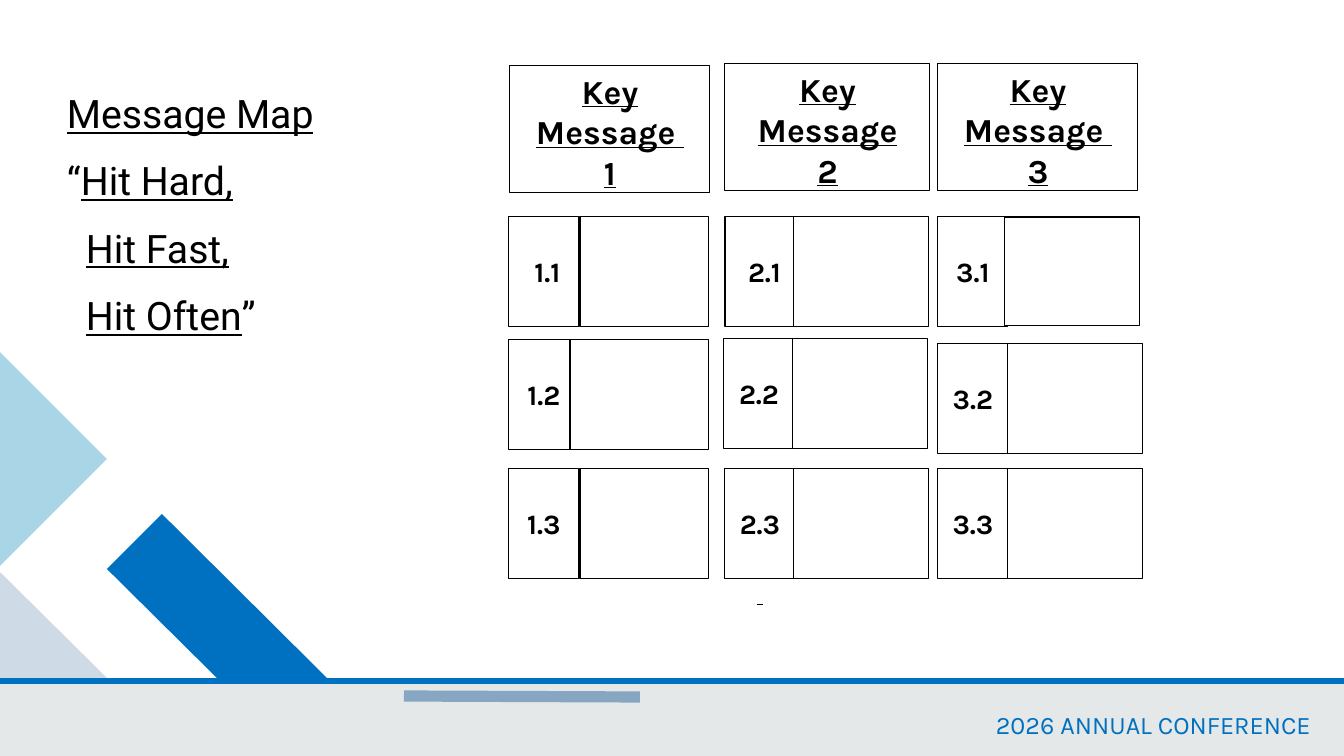
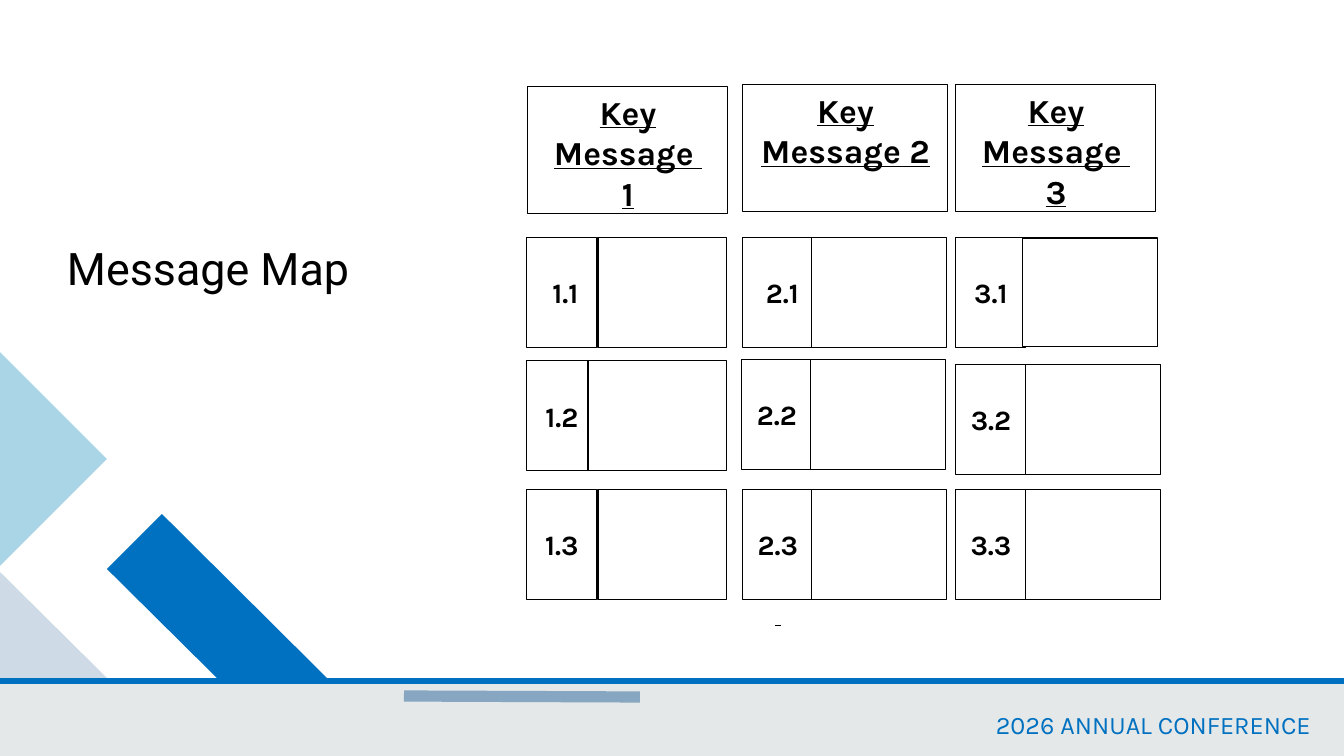
from lxml.etree import SubElement
from pptx import Presentation
from pptx.dml.color import RGBColor
from pptx.enum.shapes import MSO_CONNECTOR, MSO_SHAPE
from pptx.enum.text import MSO_ANCHOR, MSO_AUTO_SIZE, PP_ALIGN
from pptx.oxml.ns import qn
from pptx.util import Emu, Pt

PX = 914400 / 100.8
WIDTH, HEIGHT = 1344, 756

BLACK = RGBColor(0x00, 0x00, 0x00)
WHITE = RGBColor(0xFF, 0xFF, 0xFF)
BLUE = RGBColor(0x00, 0x70, 0xC0)
SKY = RGBColor(0xA9, 0xD5, 0xE7)
MIST = RGBColor(0xCE, 0xDB, 0xE6)
STEEL = RGBColor(0x86, 0xA6, 0xC1)
BAND_GREY = RGBColor(0xE4, 0xE8, 0xE8)
MAP_FONT, TITLE_FONT = "Karla", "Roboto"

FOOTER = "2026 ANNUAL CONFERENCE"
CORNER_OUTLINES = [
    (BLUE, [(327, 678), (217, 678), (107, 569), (162, 514)]),
    (MIST, [(107, 678), (0, 678), (0, 572)]),
    (SKY, [(0, 352), (107, 459), (0, 566)]),
]
RULES = [
    ((0, 681), (WIDTH, 681), BLUE, 4.5),
    ((404, 696), (640, 697), STEEL, 8),
]

HEADING_BOXES = [(510, 66, 200, 127), (725, 64, 205, 127), (938, 64, 200, 127)]
CELL_HEIGHT = 110
CELLS = [
    (" 1.1", 509, 217, 70, 580, 129),
    ("1.2", 509, 340, 70, 570, 139),
    ("1.3", 509, 469, 70, 580, 129),
    ("2.1", 725, 217, 79, 794, 135),
    ("2.2", 724, 339, 70, 793, 135),
    ("2.3", 725, 469, 70, 794, 135),
    ("3.1", 938, 217, 70, 1005, 135),
    ("3.2", 938, 344, 70, 1008, 135),
    ("3.3", 938, 469, 70, 1008, 135),
]
SHORT_BLANK = "3.1"
UNDERSCORED = "2.3"

SLIDES = [
    {
        "title": "Message Map", "title_top": 95, "title_size": 28, "title_underline": True,
        "slogan": [
            (0, [("“", False), ("Hit Hard,", True)]),
            (19, [("Hit Fast,", True)]),
            (19, [("Hit Often", True), ("”", False)]),
        ],
        "headings": [("Key Message ", "1"), ("Key Message", "2"), ("Key Message ", "3")],
        "shift": (0, 0),
    },
    {
        "title": "Message Map", "title_top": 247, "title_size": 32, "title_underline": False,
        "slogan": [],
        "headings": [("Key Message ", "1"), ("Key Message 2",), ("Key Message ", "3")],
        "shift": (18, 21),
    },
]


def px(value):
    return Emu(round(value * PX))


def add_run(paragraph, text, font, size, color=BLACK, bold=False, underline=False):
    run = paragraph.add_run()
    run.text = text
    run.font.name = font
    run.font.size = Pt(size)
    run.font.color.rgb = color
    run.font.bold = bold
    run.font.underline = underline


def next_paragraph(frame, position):
    return frame.add_paragraph() if position else frame.paragraphs[0]


def add_box(slide, left, top, width, height, fill=WHITE, line=BLACK, weight=0.75):
    box = slide.shapes.add_shape(MSO_SHAPE.RECTANGLE, px(left), px(top), px(width), px(height))
    box.shadow.inherit = False
    box.fill.solid()
    box.fill.fore_color.rgb = fill
    box.line.color.rgb = line
    box.line.width = Pt(weight)
    box.text_frame.word_wrap = True
    box.text_frame.vertical_anchor = MSO_ANCHOR.TOP
    return box


def add_rule(slide, start, end, color, weight):
    rule = slide.shapes.add_connector(MSO_CONNECTOR.STRAIGHT, *map(px, start + end))
    rule.line.color.rgb = color
    rule.line.width = Pt(weight)
    SubElement(rule.element.spPr, qn("a:effectLst"))
    return rule


def add_corner(slide, color, points):
    builder = slide.shapes.build_freeform(*points[0], scale=PX)
    builder.add_line_segments(points[1:], close=True)
    corner = builder.convert_to_shape()
    corner.shadow.inherit = False
    corner.fill.solid()
    corner.fill.fore_color.rgb = color
    corner.line.fill.background()
    return corner


def add_footer(slide):
    footer = slide.shapes.add_textbox(px(986), px(704), px(350), px(40))
    footer.text_frame.word_wrap = True
    add_run(footer.text_frame.paragraphs[0], FOOTER, MAP_FONT, 18, BLUE)
    return footer


def decorate_master(prs, slide):
    parts = [add_box(slide, 0, 681, WIDTH, 75, BAND_GREY, BAND_GREY, 1), add_footer(slide)]
    parts.append(add_rule(slide, *RULES[0]))
    parts += [add_corner(slide, *outline) for outline in CORNER_OUTLINES]
    parts.append(add_rule(slide, *RULES[1]))
    for number, part in enumerate(parts, 100):
        part.element.xpath(".//p:cNvPr")[0].set("id", str(number))
        prs.slide_master.shapes.element.append(part.element)


def place_placeholder(holder, top, height):
    holder.left, holder.top, holder.width, holder.height = map(px, (67, top, 311, height))
    frame = holder.text_frame
    frame.word_wrap = True
    frame.auto_size = MSO_AUTO_SIZE.NONE
    frame.vertical_anchor = MSO_ANCHOR.TOP
    frame.margin_left = frame.margin_top = frame.margin_bottom = 0
    frame.margin_right = px(10)
    return frame


def format_line(paragraph, space_before=0):
    paragraph.alignment = PP_ALIGN.LEFT
    paragraph.line_spacing = 0.9
    paragraph.space_before = Pt(space_before)


def fill_title(slide, content):
    size = content["title_size"]
    frame = place_placeholder(slide.shapes.title, content["title_top"], size * 1.5)
    format_line(frame.paragraphs[0])
    add_run(frame.paragraphs[0], content["title"], TITLE_FONT, size,
            underline=content["title_underline"])


def fill_slogan(slide, slogan):
    frame = place_placeholder(slide.placeholders[1], 162, 180)
    for position, (indent, pieces) in enumerate(slogan):
        line = next_paragraph(frame, position)
        properties = line._p.get_or_add_pPr()
        properties.set("marL", str(px(indent)))
        properties.set("indent", "0")
        SubElement(properties, qn("a:buNone"))
        format_line(line, 18 if position else 0)
        for text, underlined in pieces:
            add_run(line, text, TITLE_FONT, 28, underline=underlined)


def draw_heading(slide, lines, left, top, width, height):
    frame = add_box(slide, left, top, width, height).text_frame
    for position, text in enumerate(lines):
        paragraph = next_paragraph(frame, position)
        paragraph.alignment = PP_ALIGN.CENTER
        add_run(paragraph, text, MAP_FONT, 24, bold=True, underline=True)


def draw_cell(slide, shift, label, left, top, width, blank_left, blank_width):
    dx, dy = shift
    frame = add_box(slide, left + dx, top + dy, width, CELL_HEIGHT).text_frame
    frame.margin_top = px(38)
    number = frame.paragraphs[0]
    number.alignment = PP_ALIGN.CENTER
    add_run(number, label, MAP_FONT, 20, bold=True)
    if label == UNDERSCORED:
        mark = frame.add_paragraph()
        mark.alignment = PP_ALIGN.CENTER
        mark.space_before = Pt(24)
        add_run(mark, " ", MAP_FONT, 20, underline=True)
    blank_height = CELL_HEIGHT - (label == SHORT_BLANK)
    add_box(slide, blank_left + dx, top + dy, blank_width, blank_height)


def draw_map(slide, headings, shift):
    dx, dy = shift
    for lines, (left, top, width, height) in zip(headings, HEADING_BOXES):
        draw_heading(slide, lines, left + dx, top + dy, width, height)
    for cell in CELLS:
        draw_cell(slide, shift, *cell)


def main():
    prs = Presentation()
    prs.slide_width, prs.slide_height = px(WIDTH), px(HEIGHT)
    title_and_body, title_only = prs.slide_layouts[1], prs.slide_layouts[5]
    for position, content in enumerate(SLIDES):
        slogan = content["slogan"]
        slide = prs.slides.add_slide(title_and_body if slogan else title_only)
        if position == 0:
            decorate_master(prs, slide)
        fill_title(slide, content)
        if slogan:
            fill_slogan(slide, slogan)
        draw_map(slide, content["headings"], content["shift"])
    prs.save("out.pptx")


if __name__ == "__main__":
    main()
